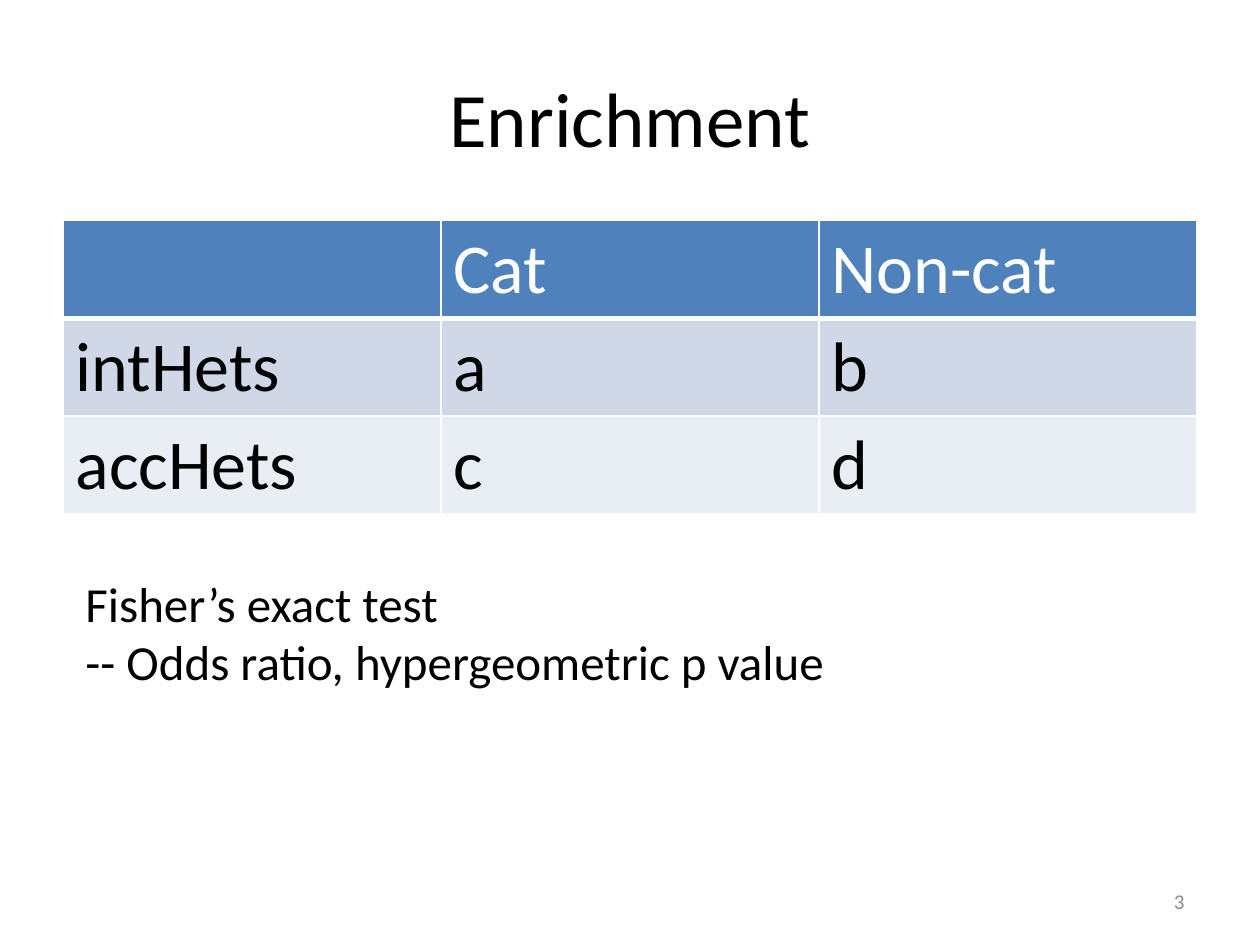
"""Build the Enrichment slide with its contingency table."""
from lxml import etree
from pptx import Presentation
from pptx import util as u
from pptx.dml.color import RGBColor
from pptx.enum import text
from pptx.oxml import ns

HUES = {
    "ink": "000000",
    "white": "FFFFFF",
    "head": "4F81BD",
    "odd": "D0D8E8",
    "even": "E9EDF4",
    "gray": "8C8C8C",
}
ROWS = [
    ["", "Cat", "Non-cat"],
    ["intHets", "a", "b"],
    ["accHets", "c", "d"],
]
LEFT, MID, RIGHT = text.PP_ALIGN.LEFT, text.PP_ALIGN.CENTER, text.PP_ALIGN.RIGHT


def paint(hue):
    return RGBColor.from_string(HUES[hue])


def write(frame, lines, size, hue="ink", align=LEFT):
    for i, line in enumerate(lines):
        para = frame.paragraphs[0] if i == 0 else frame.add_paragraph()
        para.alignment = align
        para.text = line
        form = {"size": u.Pt(size), "name": "Calibri", "bold": False}
        for key, val in form.items():
            setattr(para.font, key, val)
        para.font.color.rgb = paint(hue)


def add_text(slide, area, lines, size, hue="ink", align=LEFT, **form):
    frame = slide.shapes.add_textbox(*map(u.Inches, area)).text_frame
    form = {"word_wrap": True, **form}
    for key, val in form.items():
        setattr(frame, key, val)
    write(frame, lines, size, hue, align)


def add_edge(cell, side, width):
    props = cell._tc.get_or_add_tcPr()
    line = etree.SubElement(props, ns.qn(f"a:ln{side}"), w=str(u.Pt(width)))
    fill = etree.SubElement(line, ns.qn("a:solidFill"))
    etree.SubElement(fill, ns.qn("a:srgbClr"), val=HUES["white"])


def add_grid(slide, area, rows):
    shape = slide.shapes.add_table(len(rows), len(rows[0]), *map(u.Inches, area))
    bands = ["head", "odd", "even"]
    for r, row in enumerate(rows):
        for c, word in enumerate(row):
            cell = shape.table.cell(r, c)
            for side in "LRTB":
                add_edge(cell, side, 3 if r == 0 and side == "B" else 1)
            cell.fill.solid()
            cell.fill.fore_color.rgb = paint(bands[r])
            write(cell.text_frame, [word], 40, "ink" if r else "white")


def main():
    deck = Presentation()
    deck.slide_width, deck.slide_height = u.Inches(10), u.Inches(7.5)
    slide = deck.slides.add_slide(deck.slide_layouts[6])
    center = text.MSO_ANCHOR.MIDDLE
    add_text(slide, (0.5, 0.3, 9, 1.25), ["Enrichment"], 44,
             align=MID, vertical_anchor=center)
    add_grid(slide, (0.5, 1.75, 9, 2.33), ROWS)
    add_text(slide, (7.17, 6.95, 2.33, 0.4), ["3"], 12, "gray", RIGHT,
             vertical_anchor=center)
    notes = ["Fisher’s exact test", "-- Odds ratio, hypergeometric p value"]
    add_text(slide, (0.58, 4.5, 6.5, 1.04), notes, 28,
             auto_size=text.MSO_AUTO_SIZE.SHAPE_TO_FIT_TEXT)
    deck.save("out.pptx")


if __name__ == "__main__":
    main()
